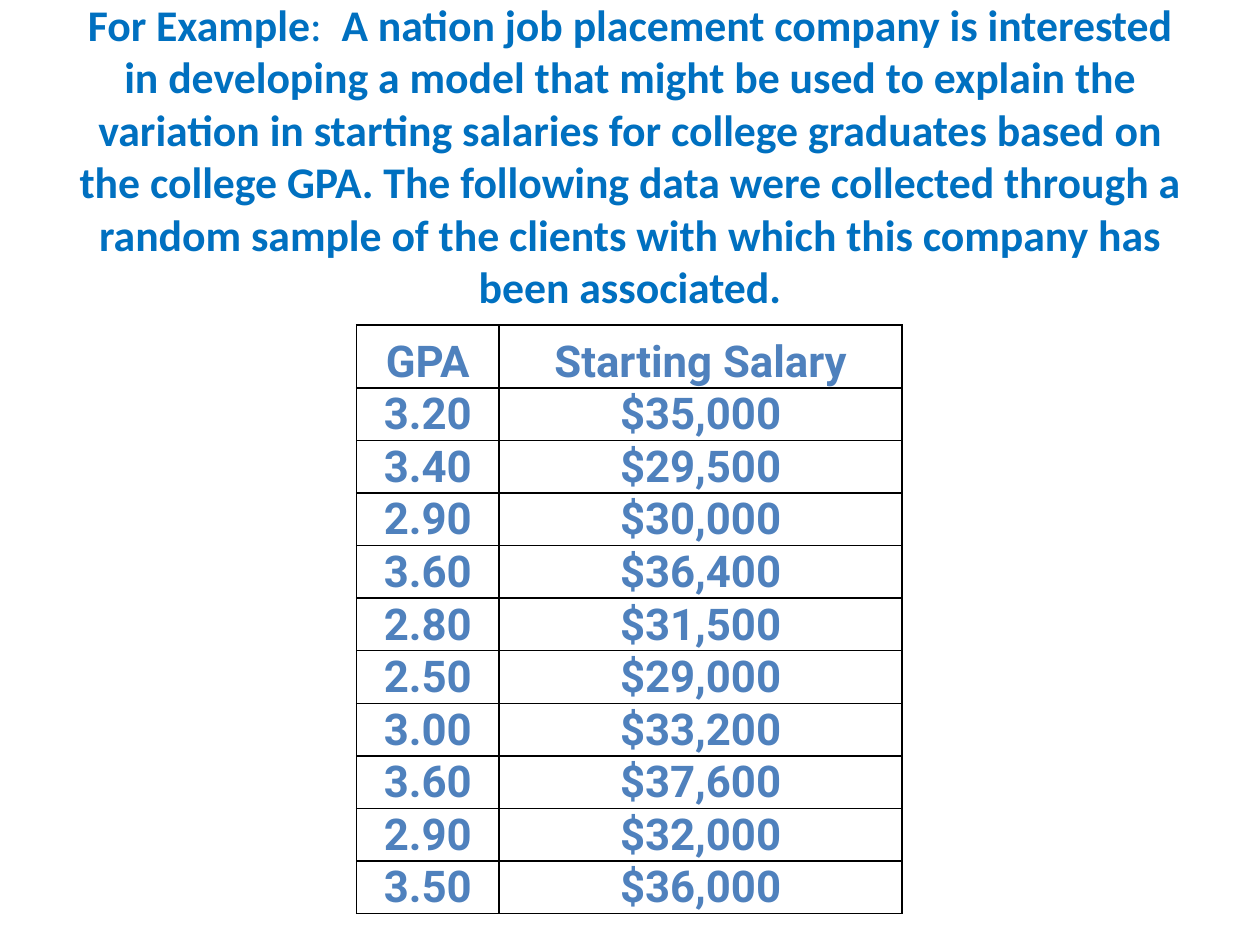
from pptx import Presentation
from pptx.dml.color import RGBColor
from pptx.enum.text import MSO_ANCHOR as Anchor, PP_ALIGN as Align
from pptx.oxml import parse_xml
from pptx.oxml.ns import nsdecls
from pptx.util import Inches, Pt

INTRO = [
    ("For Example", True),
    (":  ", False),
    ("A nation job placement company is interested in developing a model "
     "that might be used to explain the variation in starting salaries for "
     "college graduates based on the college GPA. The following data were "
     "collected through a random sample of the clients with which this "
     "company has been associated.", True),
]
SALARIES = [
    ("GPA", "Starting Salary"),
    ("3.20", "$35,000"),
    ("3.40", "$29,500"),
    ("2.90", "$30,000"),
    ("3.60", "$36,400"),
    ("2.80", "$31,500"),
    ("2.50", "$29,000"),
    ("3.00", "$33,200"),
    ("3.60", "$37,600"),
    ("2.90", "$32,000"),
    ("3.50", "$36,000"),
]
COLUMN_WIDTHS = (1.13, 3.2)
HEADER_HEIGHT, ROW_HEIGHT = 0.5, 0.4


def color(hex_value):
    """Return the RGB colour for a hex string."""
    return RGBColor.from_string(hex_value)


def set_values(target, values):
    """Set each attribute of the target from a dict."""
    for name, value in values.items():
        setattr(target, name, value)


def add_span(para, text, font_name, hex_value, bold=True):
    """Add a run of 25 point text to a centred paragraph."""
    para.alignment = Align.CENTER
    span = para.add_run()
    span.text = text
    set_values(span.font, {"name": font_name, "size": Pt(25), "bold": bold})
    span.font.color.rgb = color(hex_value)


def add_intro(slide):
    """Add the introduction above the table."""
    box = slide.shapes.add_textbox(Inches(0.5), Inches(0.3), Inches(9), Inches(2.28))
    set_values(box.text_frame, {
        "word_wrap": True,
        "vertical_anchor": Anchor.MIDDLE,
        "margin_bottom": Inches(0.47),
    })
    para = box.text_frame.paragraphs[0]
    for text, bold in INTRO:
        add_span(para, text, "Calibri", "0070C0", bold)


def add_borders(cell, hex_value):
    """Draw a one point line on every side of a cell."""
    properties = cell._tc.get_or_add_tcPr()
    for position, side in enumerate(("lnL", "lnR", "lnT", "lnB")):
        line = parse_xml(
            f'<a:{side} {nsdecls("a")} w="{Pt(1)}"><a:solidFill>'
            f'<a:srgbClr val="{hex_value}"/></a:solidFill></a:{side}>')
        properties.insert(position, line)


def fill_cell(cell, text):
    """Write and format one table cell."""
    set_values(cell, {
        "vertical_anchor": Anchor.BOTTOM,
        "margin_left": 0, "margin_right": 0,
        "margin_top": 0, "margin_bottom": 0,
    })
    cell.fill.solid()
    cell.fill.fore_color.rgb = color("FFFFFF")
    add_borders(cell, "000000")
    add_span(cell.text_frame.paragraphs[0], text, "Roboto", "4F81BD")


def add_salary_table(slide):
    """Add the table of grade averages and starting salaries."""
    height = HEADER_HEIGHT + ROW_HEIGHT * (len(SALARIES) - 1)
    table = slide.shapes.add_table(
        len(SALARIES), len(COLUMN_WIDTHS), Inches(2.83), Inches(2.58),
        Inches(sum(COLUMN_WIDTHS)), Inches(height)).table
    for column, width in zip(table.columns, COLUMN_WIDTHS):
        column.width = Inches(width)
    for index, (row, texts) in enumerate(zip(table.rows, SALARIES)):
        row.height = Inches(ROW_HEIGHT if index else HEADER_HEIGHT)
        for cell, text in zip(row.cells, texts):
            fill_cell(cell, text)


def main():
    """Build and save the deck."""
    deck = Presentation()
    set_values(deck, {"slide_width": Inches(10), "slide_height": Inches(7.5)})
    slide = deck.slides.add_slide(deck.slide_layouts[6])
    add_intro(slide)
    add_salary_table(slide)
    deck.save("out.pptx")


if __name__ == "__main__":
    main()
